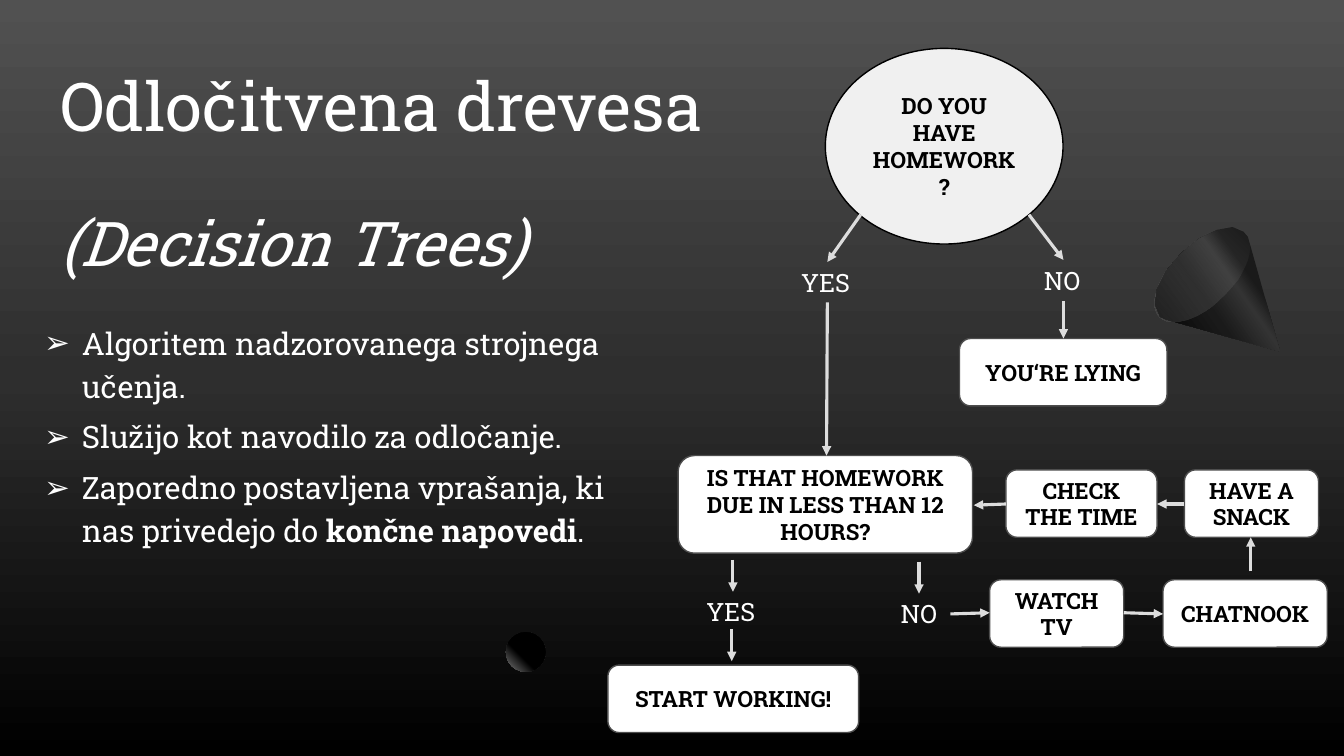
from dataclasses import dataclass

from lxml import etree
from pptx import Presentation, util as u
from pptx.dml.color import RGBColor
from pptx.enum import shapes, text
from pptx.oxml import ns
from pptx.util import Cm, Pt


@dataclass(frozen=True)
class Theme:
    font: str = "Roboto Slab"
    light: str = "FFFFFF"
    dark: str = "000000"
    start_fill: str = "F0F0F0"
    box_line: str = "4D4D4D"
    arrow: str = "DDDDDD"
    title: int = 48
    subtitle: int = 44
    body: int = 22
    label: int = 18
    node: int = 16
    backdrop: tuple = ((0, "515151", 100), (50, "2E2E2E", 100), (100, "000000", 100))
    cone: tuple = ((30, "1A1A1A", 100), (40, "333333", 100),
                   (60, "1A1A1A", 100), (100, "000000", 100))
    cone_base: tuple = ((0, "404040", 33), (100, "EBEBEB", 0))
    ball: tuple = ((60, "000000", 100), (100, "808080", 100))


theme = Theme()


def write(paragraph, words, size, color=theme.light, bold=False, italic=False,
          align=text.PP_ALIGN.LEFT):
    paragraph.alignment = align
    run = paragraph.add_run()
    run.text = words
    run.font.name, run.font.size = theme.font, Pt(size)
    run.font.bold, run.font.italic = bold, italic
    run.font.color.rgb = RGBColor.from_string(color)


def paint_gradient(fill, owner, stops, angle):
    """Fill with (percent, colour, opacity) stops; angle is counter-clockwise."""
    fill.gradient()
    fill.gradient_angle = angle
    stop_list = next(owner.iter(ns.qn("a:gsLst")))
    for old_stop in list(stop_list):
        stop_list.remove(old_stop)
    for percent, color, opacity in stops:
        stop = etree.SubElement(stop_list, ns.qn("a:gs"), pos=str(percent * 1000))
        paint = etree.SubElement(stop, ns.qn("a:srgbClr"), val=color)
        if opacity < 100:
            etree.SubElement(paint, ns.qn("a:alpha"), val=str(opacity * 1000))


# Slide and background
deck = Presentation()
deck.slide_width, deck.slide_height = Cm(33.87), Cm(19.05)
slide = deck.slides.add_slide(deck.slide_layouts[1])
paint_gradient(slide.background.fill, slide.element, theme.backdrop, 270)

# Title
title = slide.shapes.title
title.left, title.top, title.width, title.height = Cm(1.52), Cm(1.52), Cm(16.48), Cm(5.54)
heading = title.text_frame
heading.auto_size = text.MSO_AUTO_SIZE.NONE
heading.vertical_anchor = text.MSO_ANCHOR.BOTTOM
heading.margin_left = heading.margin_right = heading.margin_top = heading.margin_bottom = 0
write(heading.paragraphs[0], "Odločitvena drevesa", theme.title)
write(heading.add_paragraph(), "(Decision Trees)", theme.subtitle, italic=True)
for line in heading.paragraphs:
    line.line_spacing = 0.9
heading.paragraphs[1].space_before = Pt(48)

# Bullet list
points = slide.placeholders[1]
points.left, points.top, points.width, points.height = Cm(0.86), Cm(7.92), Cm(14.78), Cm(7.09)
points.text_frame.auto_size = text.MSO_AUTO_SIZE.NONE
POINTS = [
    [("Algoritem nadzorovanega strojnega učenja.", False)],
    [("Služijo kot navodilo za odločanje.", False)],
    [("Zaporedno postavljena vprašanja, ki nas privedejo do ", False),
     ("končne napovedi", True), (".", False)],
]
for index, parts in enumerate(POINTS):
    point = points.text_frame.add_paragraph() if index else points.text_frame.paragraphs[0]
    point.line_spacing, point.space_before, point.space_after = 1.15, Pt(0), Pt(6)
    for words, bold in parts:
        write(point, words, theme.body, bold=bold)
    layout = point._p.get_or_add_pPr()
    layout.set("marL", str(Cm(0.95)))
    layout.set("indent", str(Cm(-0.95)))
    etree.SubElement(layout, ns.qn("a:buFont"), typeface="Arial")
    etree.SubElement(layout, ns.qn("a:buChar"), char="➢")

# Cone: body and open base
CONE = [(32.26, 8.86), (29.39, 8.05), (29.24, 7.98), (29.11, 7.67), (29.16, 7.29),
        (29.39, 6.83), (29.77, 6.38), (30.23, 6.01), (30.68, 5.79), (31.06, 5.72),
        (31.34, 5.84), (31.45, 5.97)]
outline = [(Cm(x), Cm(y)) for x, y in CONE]
builder = slide.shapes.build_freeform(*outline[0])
builder.add_line_segments(outline[1:], close=True)
cone = builder.convert_to_shape()
base = slide.shapes.add_shape(shapes.MSO_SHAPE.OVAL, Cm(29.54), Cm(5.41), Cm(1.5), Cm(3))
base.rotation = 225

# Ball lit from the lower left
ball = slide.shapes.add_shape(shapes.MSO_SHAPE.OVAL, Cm(12.75), Cm(15.93), Cm(1), Cm(1))
for solid, stops, angle in [(cone, theme.cone, 215), (base, theme.cone_base, 270),
                            (ball, theme.ball, 0)]:
    solid.shadow.inherit = False
    solid.line.fill.background()
    paint_gradient(solid.fill, solid.element, stops, angle)
linear = next(ball.element.iter(ns.qn("a:lin")))
radial = etree.Element(ns.qn("a:path"), path="circle")
etree.SubElement(radial, ns.qn("a:fillToRect"), l="100000", b="100000")
linear.getparent().replace(linear, radial)

# Tree nodes: words, left, top, width, height
ROW = 1.7
NODES = [
    ("DO YOU HAVE HOMEWORK?", 20.8, 1.22, 5.99, 4.93),
    ("YOU‘RE LYING", 24.18, 8.53, 5.23, ROW),
    ("IS THAT HOMEWORK DUE IN LESS THAN 12 HOURS?", 17.09, 11.48, 7.42, 2.46),
    ("START WORKING!", 15.32, 16.76, 6.32, ROW),
    ("WATCH TV", 24.94, 14.61, 3.38, ROW),
    ("CHATNOOK", 29.31, 14.61, 4.14, ROW),
    ("HAVE A SNACK", 29.85, 11.84, 3.38, ROW),
    ("CHECK THE TIME", 25.35, 11.84, 3.81, ROW),
]
for index, (words, *place) in enumerate(NODES):
    is_start = index == 0
    outline_kind = shapes.MSO_SHAPE.OVAL if is_start else shapes.MSO_SHAPE.ROUNDED_RECTANGLE
    node = slide.shapes.add_shape(outline_kind, *map(Cm, place))
    node.shadow.inherit = False
    node.fill.solid()
    node.fill.fore_color.rgb = RGBColor.from_string(theme.start_fill if is_start else theme.light)
    node.line.color.rgb = RGBColor.from_string(theme.dark if is_start else theme.box_line)
    node.line.width = Pt(1)
    node.text_frame.word_wrap = True
    node.text_frame.vertical_anchor = text.MSO_ANCHOR.MIDDLE
    write(node.text_frame.paragraphs[0], words, theme.node, color=theme.dark, bold=True,
          align=text.PP_ALIGN.CENTER)

# Branch labels
ANSWERS = [("YES", 19.94, 6.6, 1.8), ("NO", 26.06, 6.55, 1.5),
           ("YES", 17.55, 14.91, 1.8), ("NO", 22.45, 14.96, 1.5)]
for words, left, top, width in ANSWERS:
    answer = slide.shapes.add_textbox(Cm(left), Cm(top), Cm(width), Cm(1.02))
    answer.text_frame.word_wrap = False
    answer.text_frame.auto_size = text.MSO_AUTO_SIZE.SHAPE_TO_FIT_TEXT
    write(answer.text_frame.paragraphs[0], words, theme.label)

# Arrows: from x, y to x, y
ARROWS = [
    (21.69, 5.41, 20.85, 6.6), (25.93, 5.41, 26.8, 6.55),
    (20.85, 7.62, 20.83, 11.48), (26.8, 7.59, 26.8, 8.53),
    (18.47, 14.1, 18.47, 14.91), (23.16, 14.15, 23.16, 14.96),
    (18.44, 15.85, 18.44, 16.66), (23.95, 15.47, 24.94, 15.44),
    (28.32, 15.44, 29.31, 15.47), (31.52, 14.4, 31.52, 13.54),
    (25.35, 12.7, 24.54, 12.73), (29.85, 12.7, 29.16, 12.7),
]
for ends in ARROWS:
    arrow = slide.shapes.add_connector(shapes.MSO_CONNECTOR.STRAIGHT, *map(u.Cm, ends))
    arrow.line.color.rgb = RGBColor.from_string(theme.arrow)
    arrow.line.width = Pt(2.25)
    etree.SubElement(arrow.line._get_or_add_ln(), ns.qn("a:tailEnd"), type="triangle")
    etree.SubElement(arrow.element.spPr, ns.qn("a:effectLst"))

deck.save("out.pptx")
